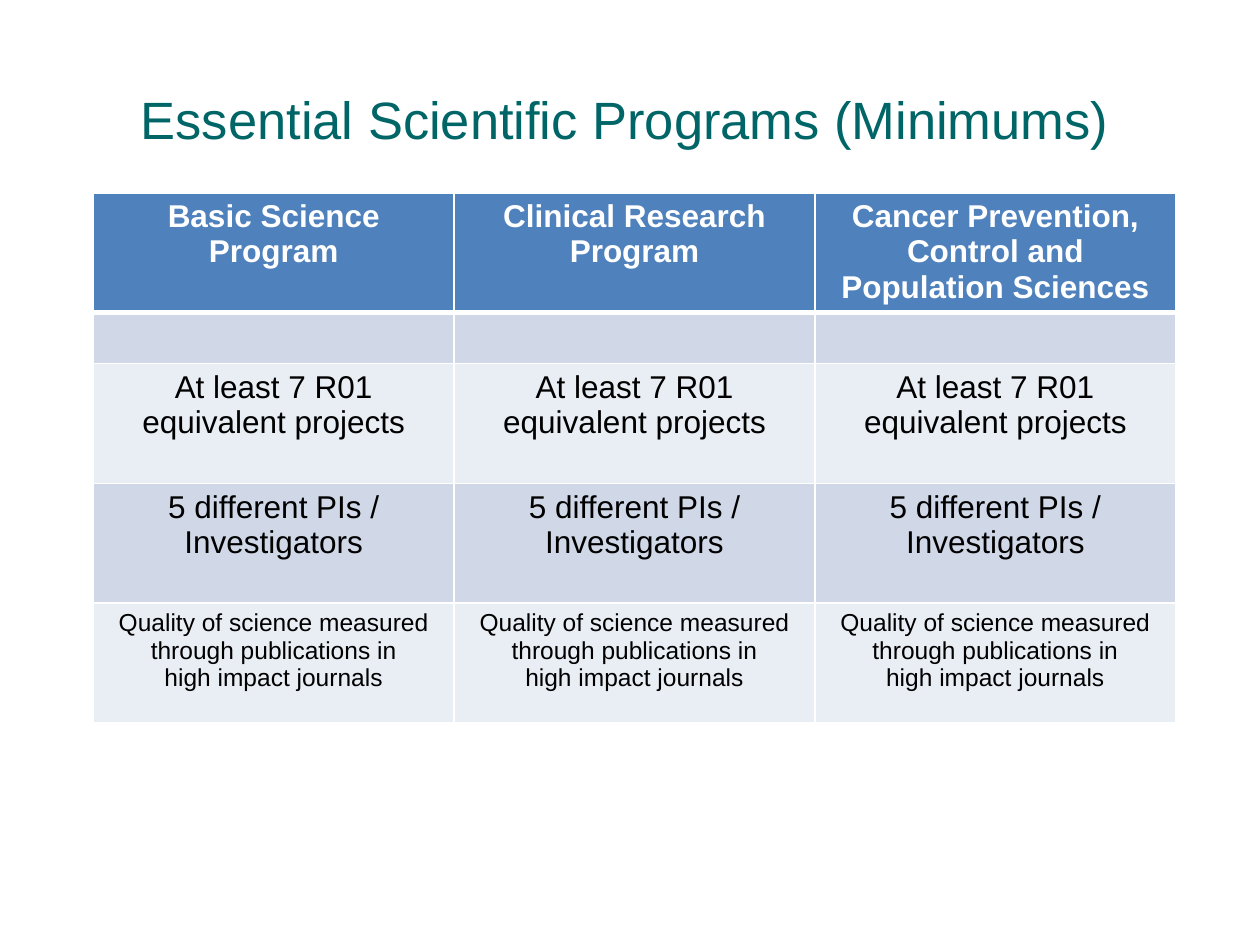
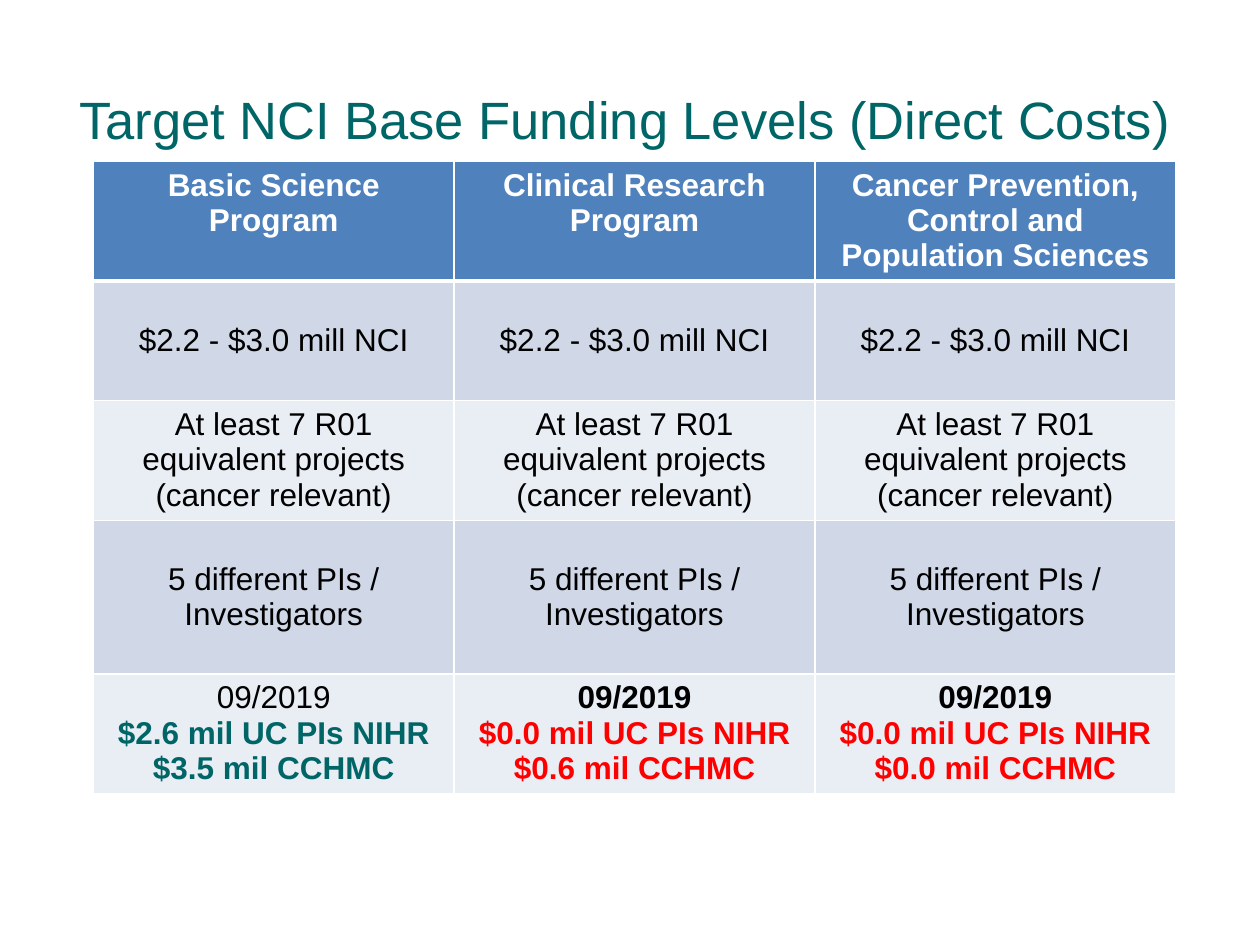
from lxml import etree
from pptx import Presentation
from pptx import util as u
from pptx.dml.color import RGBColor
from pptx.enum import text
from pptx.oxml.ns import qn

COLORS = {"teal": "006567", "header": "4F81BD", "band": "D0D8E8", "light": "E9EDF4",
          "white": "FFFFFF", "black": "000000", "red": "FF0000"}
PROGRAMS = ["Basic Science Program", "Clinical Research Program",
            "Cancer Prevention, Control and Population Sciences"]
COLUMN_WIDTH = 2.864
ROW_HEIGHT = 0.95


def write_line(paragraph, line, size=18, color="black", bold=False):
    """Write one centred line of formatted text."""
    paragraph.alignment = text.PP_ALIGN.CENTER
    run = paragraph.add_run()
    run.text = line
    for name, value in {"name": "Arial", "size": u.Pt(size), "bold": bold}.items():
        setattr(run.font, name, value)
    run.font.color.rgb = RGBColor.from_string(COLORS[color])


def add_borders(cell, row_index):
    """Draw white cell borders, with a thick rule under the header row."""
    widths = {"lnL": 1, "lnR": 1, "lnT": 3 if row_index == 1 else 1,
              "lnB": 3 if row_index == 0 else 1}
    properties = cell._tc.get_or_add_tcPr()
    for position, (tag, width) in enumerate(widths.items()):
        border = etree.Element(qn(f"a:{tag}"), w=str(u.Pt(width)))
        fill = etree.SubElement(border, qn("a:solidFill"))
        etree.SubElement(fill, qn("a:srgbClr"), val=COLORS["white"])
        properties.insert(position, border)


# Each body row: height, size, vertical anchor, lines of each cell.
# Each line: text, colour, bold.
TOP, MIDDLE = text.MSO_ANCHOR.TOP, text.MSO_ANCHOR.MIDDLE
header_row = (ROW_HEIGHT, 18, TOP, [[(program, "white", True)] for program in PROGRAMS])
projects = ("At least 7 R01 equivalent projects", "black", False)
investigators = ("5 different PIs / Investigators", "black", False)
quality = [("Quality of science measured through publications in", "black", False),
           ("high impact journals", "black", False)]
funding = [("$2.6", "$3.5", "teal", False), ("$0.0", "$0.6", "red", True),
           ("$0.0", "$0.0", "red", True)]
funding_cells = [[("09/2019", "black", bold_date),
                  (f"{university} mil UC PIs NIHR", color, True),
                  (f"{hospital} mil CCHMC", color, True)]
                 for university, hospital, color, bold_date in funding]

SLIDES = [
    ("Essential Scientific Programs (Minimums)", 1.53, [
        header_row,
        (0.38, 18, TOP, [[]] * 3),
        (ROW_HEIGHT, 18, TOP, [[projects]] * 3),
        (ROW_HEIGHT, 18, TOP, [[investigators]] * 3),
        (ROW_HEIGHT, 14, TOP, [quality] * 3),
    ]),
    ("Target NCI Base Funding Levels (Direct Costs)", 1.28, [
        header_row,
        (ROW_HEIGHT, 18, MIDDLE, [[("$2.2 - $3.0 mill NCI", "black", False)]] * 3),
        (ROW_HEIGHT, 18, TOP, [[projects, ("(cancer relevant)", "black", False)]] * 3),
        (1.22, 18, MIDDLE, [[investigators]] * 3),
        (ROW_HEIGHT, 18, TOP, funding_cells),
    ]),
]

presentation = Presentation()
presentation.slide_width = u.Inches(10)
presentation.slide_height = u.Inches(7.5)

for title_text, table_top, rows in SLIDES:
    slide = presentation.slides.add_slide(presentation.slide_layouts[5])

    # Title
    title = slide.shapes.title
    place = {"left": 0.15, "top": 0.47, "width": 9.62, "height": 0.94}
    for name, value in place.items():
        setattr(title, name, u.Inches(value))
    title.text_frame.auto_size = text.MSO_AUTO_SIZE.NONE
    title.text_frame.vertical_anchor = MIDDLE
    write_line(title.text_frame.paragraphs[0], title_text, size=30, color="teal")

    # Program table
    frame = slide.shapes.add_table(
        len(rows), len(PROGRAMS), u.Inches(0.74), u.Inches(table_top),
        u.Inches(COLUMN_WIDTH * len(PROGRAMS)), u.Inches(sum(row[0] for row in rows)))
    table = frame.table
    for column in table.columns:
        column.width = u.Inches(COLUMN_WIDTH)

    for row_index, (height, size, anchor, cells) in enumerate(rows):
        table.rows[row_index].height = u.Inches(height)
        fill_name = "header" if row_index == 0 else ("light", "band")[row_index % 2]
        for column_index, lines in enumerate(cells):
            cell = table.cell(row_index, column_index)
            cell.vertical_anchor = anchor
            cell.fill.solid()
            cell.fill.fore_color.rgb = RGBColor.from_string(COLORS[fill_name])
            add_borders(cell, row_index)
            for line_index, (line, color, bold) in enumerate(lines):
                text_frame = cell.text_frame
                paragraph = text_frame.add_paragraph() if line_index else text_frame.paragraphs[0]
                write_line(paragraph, line, size, color, bold)

presentation.save("out.pptx")
